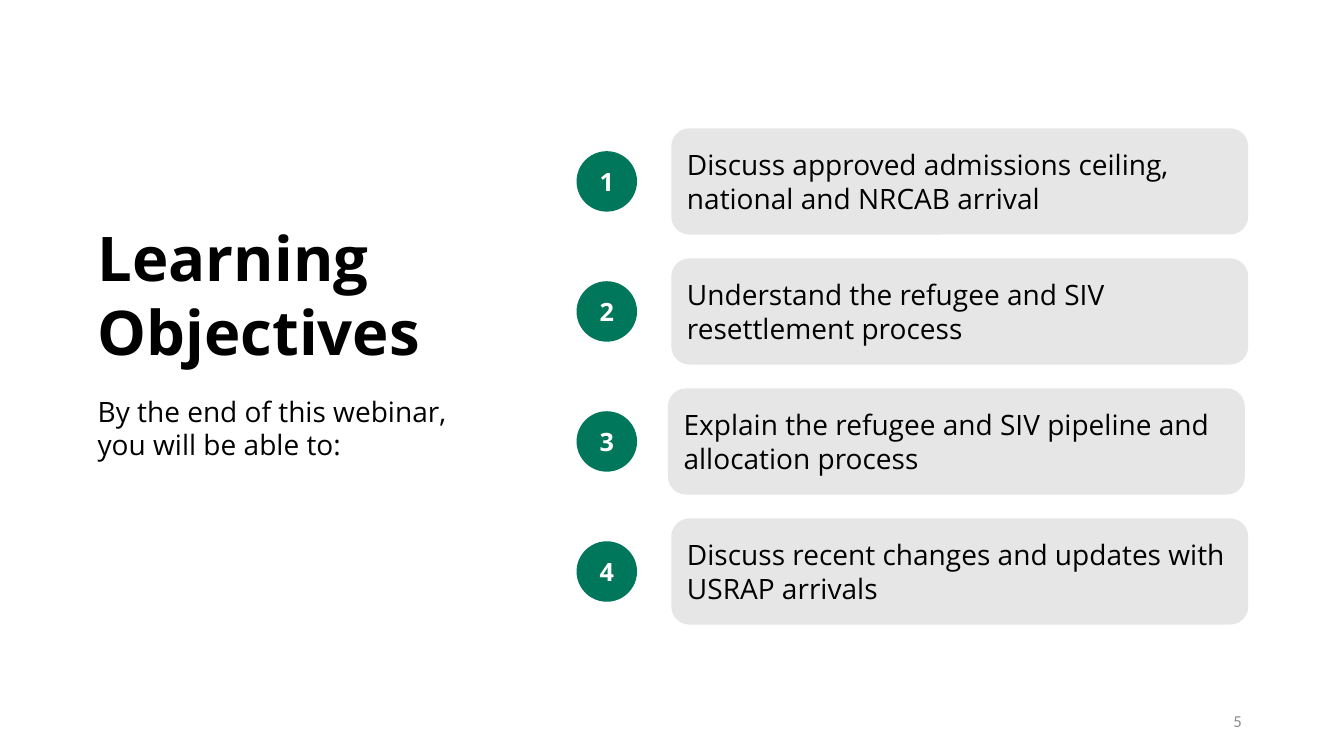
from pptx import Presentation
from pptx.dml.color import RGBColor
from pptx.enum.shapes import MSO_SHAPE as Shape
from pptx.enum.text import MSO_ANCHOR as Anchor, MSO_AUTO_SIZE as AutoSize, PP_ALIGN as Align
from pptx.util import Inches, Pt

COLORS = {"green": "00765A", "gray": "E7E6E6", "text": "000000", "white": "FFFFFF", "muted": "8C8C8C"}
COLUMNS, ROWS = 40, 30
OBJECTIVES = [
    "Discuss approved admissions ceiling, national and NRCAB arrival",
    "Understand the refugee and SIV resettlement process",
    "Explain the refugee and SIV pipeline and allocation process",
    "Discuss recent changes and updates with USRAP arrivals",
]
CARD_LEFTS = [20, 20, 19.9, 20]
CARD_TOP, CARD_HEIGHT, CARD_PITCH = 5.12, 4.16, 5.16
BADGE_HEIGHT = 2.4


class SlideBuilder:
    def __init__(self, deck, font="Open Sans"):
        self.font = font
        self.column = deck.slide_width / COLUMNS
        self.row = deck.slide_height / ROWS
        self.page = deck.slides.add_slide(deck.slide_layouts[6])

    def area(self, left, top, width, height):
        """Turn columns and rows into slide lengths."""
        return [round(n * unit) for n, unit in
                zip((left, top, width, height), (self.column, self.row) * 2)]

    def fill_text(self, box, lines, size, color="text", bold=False, align=Align.LEFT,
                  anchor=Anchor.MIDDLE, font=None):
        frame = box.text_frame
        frame.word_wrap = True
        frame.vertical_anchor = anchor
        for index, line in enumerate(lines):
            para = frame.add_paragraph() if index else frame.paragraphs[0]
            para.alignment = align
            span = para.add_run()
            span.text = line
            span.font.name = font or self.font
            span.font.size = Pt(size)
            span.font.bold = bold
            span.font.color.rgb = RGBColor.from_string(COLORS[color])

    def text(self, place, lines, size, grow=False, **style):
        box = self.page.shapes.add_textbox(*self.area(*place))
        self.fill_text(box, lines, size, **style)
        if grow:
            box.text_frame.auto_size = AutoSize.SHAPE_TO_FIT_TEXT

    def shape(self, kind, place, fill, line, size, outlined=False, **style):
        box = self.page.shapes.add_shape(kind, *self.area(*place))
        box.shadow.inherit = False
        color = RGBColor.from_string(COLORS[fill])
        box.fill.solid()
        box.fill.fore_color.rgb = color
        if outlined:
            box.line.color.rgb = color
            box.line.width = Pt(1)
        else:
            box.line.fill.background()
        self.fill_text(box, [line], size, **style)

    def badge(self, top, number):
        self.shape(Shape.OVAL, (17.16, top, 1.8, BADGE_HEIGHT), "green", str(number), 18,
                   color="white", bold=True, align=Align.CENTER)

    def card(self, left, top, line):
        self.shape(Shape.ROUNDED_RECTANGLE, (left, top, 17.13, CARD_HEIGHT), "gray", line, 20,
                   outlined=True)


def main():
    deck = Presentation()
    deck.slide_width, deck.slide_height = Inches(13.33), Inches(7.5)
    slide = SlideBuilder(deck)
    slide.text((2.61, 8.52, 11.61, 6.32), ["Learning", "Objectives"], 44, grow=True,
               bold=True, anchor=Anchor.TOP)
    slide.text((2.61, 15.44, 12.51, 3.08), ["By the end of this webinar, you will be able to:"],
               20, grow=True, anchor=Anchor.TOP)
    for index, (left, objective) in enumerate(zip(CARD_LEFTS, OBJECTIVES)):
        top = CARD_TOP + index * CARD_PITCH
        slide.badge(top + (CARD_HEIGHT - BADGE_HEIGHT) / 2, index + 1)
        slide.card(left, top, objective)
    slide.text((28.26, 27.8, 9, 1.6), ["5"], 12, color="muted", align=Align.RIGHT, font="Calibri")
    deck.save("out.pptx")


if __name__ == "__main__":
    main()
